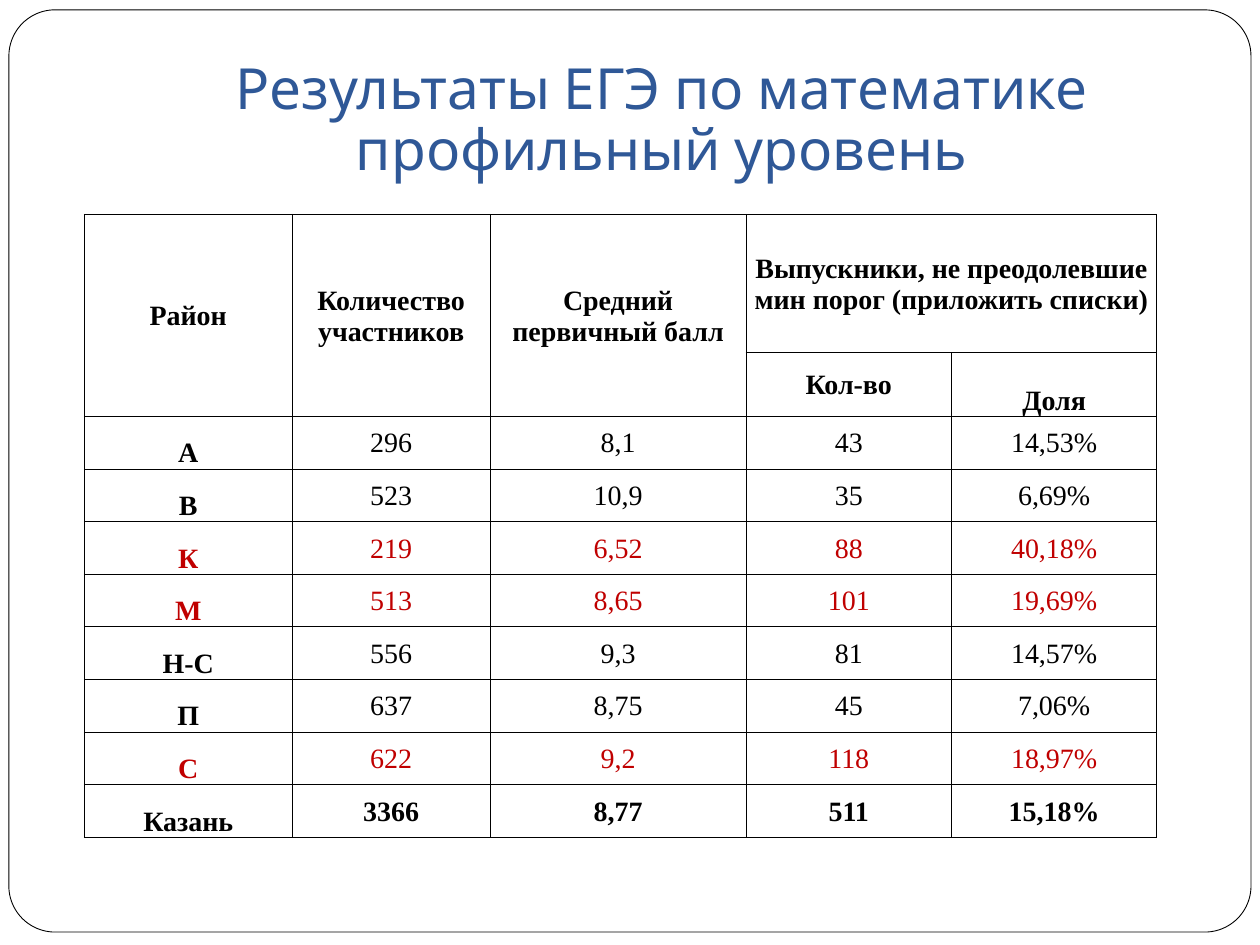
from dataclasses import dataclass

from lxml.etree import SubElement
from pptx import Presentation
from pptx.dml.color import RGBColor
from pptx.enum.shapes import MSO_SHAPE
from pptx.enum.text import MSO_ANCHOR, MSO_AUTO_SIZE, PP_ALIGN
from pptx.oxml.ns import qn
from pptx.util import Cm, Pt


@dataclass(frozen=True)
class Theme:
    paper: RGBColor = RGBColor(0xFF, 0xFF, 0xFF)
    ink: RGBColor = RGBColor(0x00, 0x00, 0x00)
    heading: RGBColor = RGBColor(0x2F, 0x58, 0x97)
    warning: RGBColor = RGBColor(0xC0, 0x00, 0x00)
    heading_font: str = "Karla"
    table_font: str = "Times New Roman"
    heading_size: Pt = Pt(32.4)
    table_size: Pt = Pt(16)
    rule: Pt = Pt(0.5)


@dataclass(frozen=True)
class District:
    name: str
    results: tuple[str, ...]
    weak: bool = False
    total: bool = False


THEME = Theme()
HEADERS = ("Район", "Количество участников", "Средний первичный балл",
           "Выпускники, не преодолевшие мин порог (приложить списки)")
DISTRICTS = (
    District("А", ("296", "8,1", "43", "14,53%")),
    District("В", ("523", "10,9", "35", "6,69%")),
    District("К", ("219", "6,52", "88", "40,18%"), weak=True),
    District("М", ("513", "8,65", "101", "19,69%"), weak=True),
    District("Н-С", ("556", "9,3", "81", "14,57%")),
    District("П", ("637", "8,75", "45", "7,06%")),
    District("С", ("622", "9,2", "118", "18,97%"), weak=True),
    District("Казань", ("3366", "8,77", "511", "15,18%"), total=True),
)
COLUMN_WIDTHS = (4.19, 3.99, 5.16, 4.14, 4.14)
HEADER_HEIGHT, ROW_HEIGHT = 2.79, 1.06


def draw_frame(slide) -> None:
    frame = slide.shapes.add_shape(MSO_SHAPE.ROUNDED_RECTANGLE,
                                   Cm(0.18), Cm(0.2), Cm(25.04), Cm(18.59))
    frame.adjustments[0] = 0.05
    frame.shadow.inherit = False
    frame.fill.solid()
    frame.fill.fore_color.rgb = THEME.paper
    frame.line.color.rgb = THEME.ink
    frame.line.width = THEME.rule
    # Behind the title placeholder
    slide.shapes.element.insert(2, frame.element)


def draw_title(slide, text: str) -> None:
    title = slide.shapes.title
    title.left, title.top, title.width, title.height = Cm(2.54), Cm(0.76), Cm(21.59), Cm(3.18)
    body = title.text_frame
    body.text = text
    body.word_wrap = True
    body.auto_size = MSO_AUTO_SIZE.NONE
    body.vertical_anchor = MSO_ANCHOR.BOTTOM
    body.margin_left = body.margin_right = body.margin_bottom = Cm(0.25)
    body.margin_top = Cm(0.13)
    heading = body.paragraphs[0]
    heading.alignment = PP_ALIGN.CENTER
    heading.line_spacing = 0.9
    for run in heading.runs:
        run.font.name = THEME.heading_font
        run.font.size = THEME.heading_size
        run.font.color.rgb = THEME.heading


def style_cell(cell) -> None:
    """Clear the fill, set the margins and rule all four sides."""
    cell.margin_left = cell.margin_right = cell.margin_top = Cm(0.03)
    cell.margin_bottom = 0
    properties = cell._tc.get_or_add_tcPr()
    for side in ("a:lnL", "a:lnR", "a:lnT", "a:lnB"):
        border = SubElement(properties, qn(side), w=str(THEME.rule))
        fill = SubElement(border, qn("a:solidFill"))
        SubElement(fill, qn("a:srgbClr"), val=str(THEME.ink))
    cell.fill.background()


def write_cell(cell, text: str, bold: bool = True, color: RGBColor = THEME.ink,
               anchor: MSO_ANCHOR = MSO_ANCHOR.MIDDLE) -> None:
    cell.text_frame.text = text
    cell.vertical_anchor = anchor
    paragraph = cell.text_frame.paragraphs[0]
    paragraph.alignment = PP_ALIGN.CENTER
    font = paragraph.runs[0].font
    font.name, font.size, font.bold = THEME.table_font, THEME.table_size, bold
    font.color.rgb = color


def draw_results(slide) -> None:
    row_heights = [HEADER_HEIGHT] + [ROW_HEIGHT] * (len(DISTRICTS) + 1)
    table = slide.shapes.add_table(
        len(row_heights), len(COLUMN_WIDTHS), Cm(1.7), Cm(4.32),
        Cm(sum(COLUMN_WIDTHS)), Cm(sum(row_heights))).table
    table.first_row = table.horz_banding = False
    for column, width in zip(table.columns, COLUMN_WIDTHS):
        column.width = Cm(width)
    for row, height in zip(table.rows, row_heights):
        row.height = Cm(height)
        for cell in row.cells:
            style_cell(cell)

    # Two-level header
    for index in range(3):
        table.cell(0, index).merge(table.cell(1, index))
    table.cell(0, 3).merge(table.cell(0, 4))
    for index, header in enumerate(HEADERS):
        write_cell(table.cell(0, index), header)
    write_cell(table.cell(1, 3), "Кол-во")
    write_cell(table.cell(1, 4), "Доля", anchor=MSO_ANCHOR.BOTTOM)

    # One row per district, weak results in red
    for row_index, district in enumerate(DISTRICTS, start=2):
        color = THEME.warning if district.weak else THEME.ink
        write_cell(table.cell(row_index, 0), district.name, color=color,
                   anchor=MSO_ANCHOR.BOTTOM)
        for column_index, result in enumerate(district.results, start=1):
            write_cell(table.cell(row_index, column_index), result,
                       bold=district.total, color=color)


def main() -> None:
    deck = Presentation()
    deck.slide_width, deck.slide_height = Cm(25.4), Cm(19.05)
    slide = deck.slides.add_slide(deck.slide_layouts[5])
    draw_frame(slide)
    draw_title(slide, "Результаты ЕГЭ по математике\vпрофильный уровень")
    draw_results(slide)
    deck.save("out.pptx")


if __name__ == "__main__":
    main()
